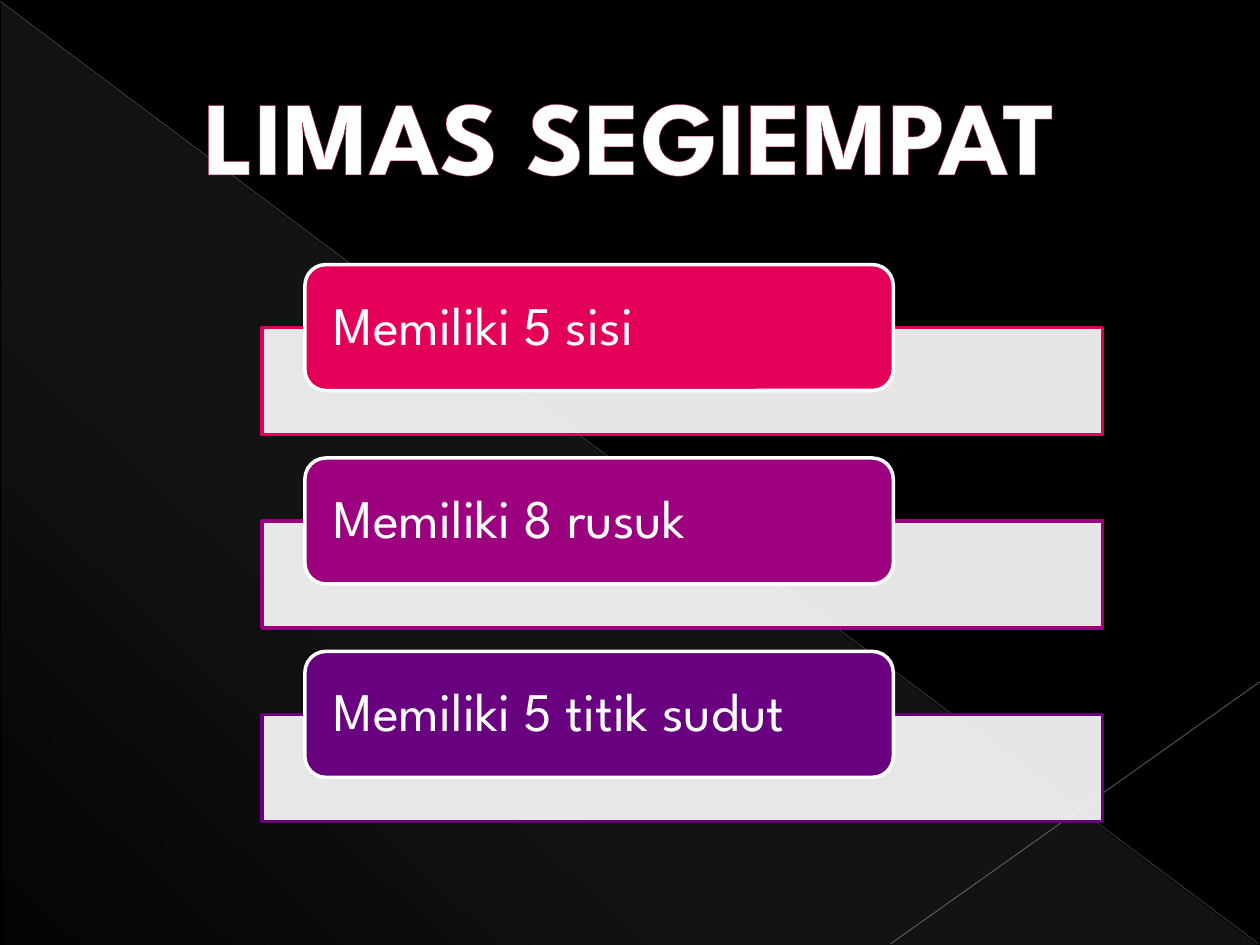
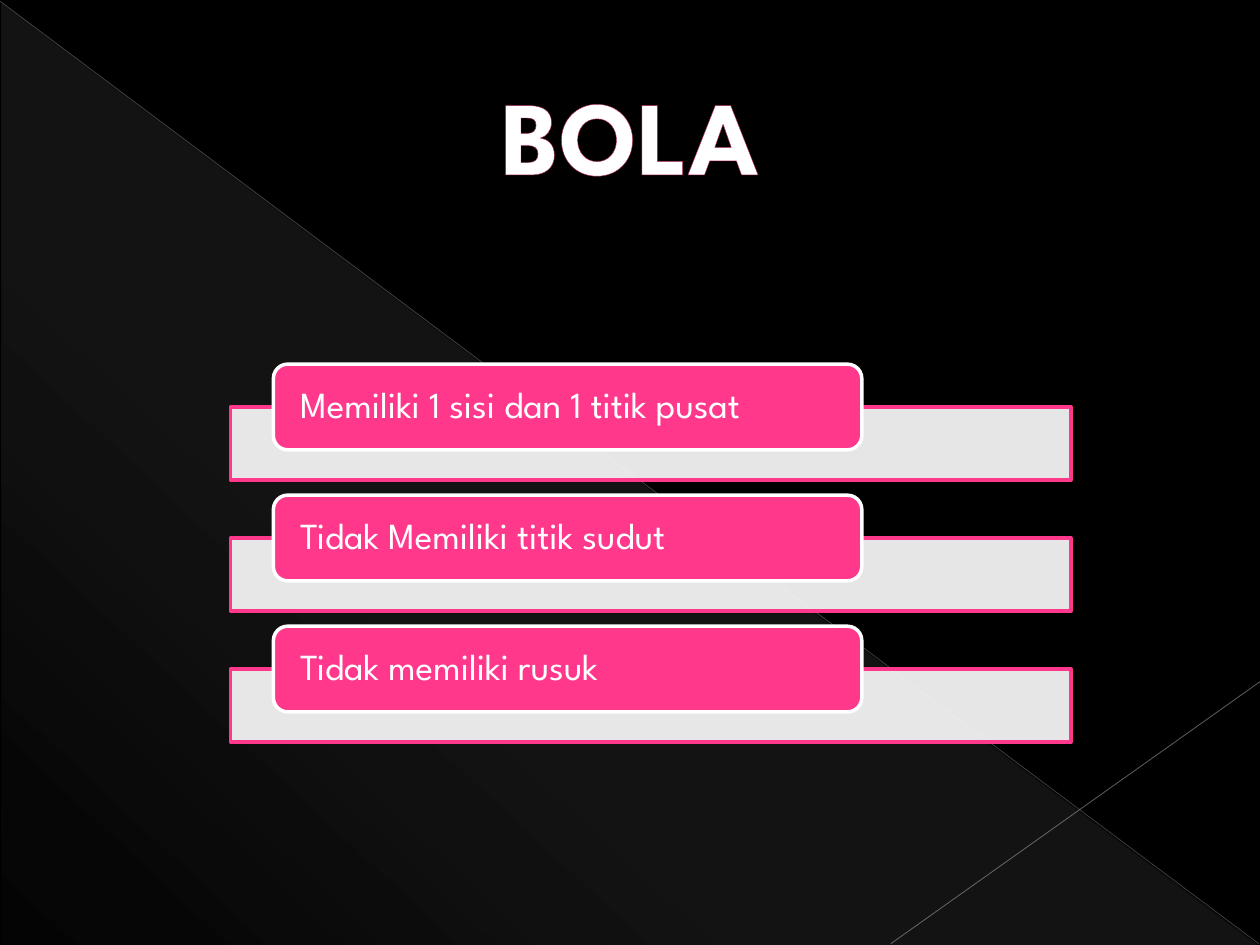
from lxml import etree
from pptx import Presentation, util as u
from pptx.dml.color import RGBColor
from pptx.enum import shapes, text
from pptx.oxml import parse_xml
from pptx.oxml.ns import nsdecls, qn

FONT = "League Spartan"
COLORS = {
    "background": "000000", "white": "FFFFFF", "wedge": "D2D2D2",
    "diagonal": "BFBFBF", "corner": "C6C6C6", "title_edge": "B12761",
    "red": "E40059", "magenta": "9C007F", "purple": "68007F", "pink": "FF388C",
}
WEDGE_STOPS = [(0, 10), (70, 8), (100, 1)]
WEDGE_ANGLE = 133
RULES = [
    ("diagonal", (0, 0.01, 9.99, 7.49), 0.39, 35),
    ("corner", (10, 5.41, 7.07, 7.49), 0.47, 45),
]
BAR_W, LABEL_W, LABEL_INDENT = 6.67, 4.67, 0.34
SLIDES = [
    {"title": "LIMAS SEGIEMPAT", "left": 2.08, "top": 2.1, "pitch": 1.535,
     "bar_drop": 0.5, "bar_h": 0.85, "label_h": 1, "size": 31,
     "facts": [("Memiliki 5 sisi", "red"), ("Memiliki 8 rusuk", "magenta"),
               ("Memiliki 5 titik sudut", "purple")]},
    {"title": "BOLA", "left": 1.83, "top": 2.89, "pitch": 1.04,
     "bar_drop": 0.34, "bar_h": 0.58, "label_h": 0.68, "size": 21,
     "facts": [("Memiliki 1 sisi dan 1 titik pusat", "pink"),
               ("Tidak Memiliki titik sudut", "pink"),
               ("Tidak memiliki rusuk", "pink")]},
]


def rgb(name):
    return RGBColor.from_string(COLORS[name])


def set_alpha(sp, percent):
    color = sp._element.spPr.find(".//" + qn("a:srgbClr"))
    etree.SubElement(color, qn("a:alpha"), val=str(percent * 1000))


def add_box(s, kind, box, fill=None, line=None):
    sp = s.shapes.add_shape(kind, *map(u.Inches, box))
    sp.shadow.inherit = False
    if fill:
        sp.fill.solid()
        sp.fill.fore_color.rgb = rgb(fill)
    if line:
        sp.line.color.rgb = rgb(line)
        sp.line.width = u.Pt(2)
    else:
        sp.line.fill.background()
    return sp


def write(sp, content, size, bold=False, align=text.PP_ALIGN.LEFT,
          inset=(0.1, 0.05), spacing=None, edge=None):
    tf = sp.text_frame
    tf.word_wrap = True
    tf.vertical_anchor = text.MSO_ANCHOR.MIDDLE
    tf.margin_left = tf.margin_right = u.Inches(inset[0])
    tf.margin_top = tf.margin_bottom = u.Inches(inset[1])
    p = tf.paragraphs[0]
    p.alignment = align
    p.line_spacing = spacing
    r = p.add_run()
    r.text = content
    r.font.name = FONT
    r.font.size = u.Pt(size)
    r.font.bold = bold
    r.font.color.rgb = rgb("white")
    if edge:
        r.font._element.insert(0, parse_xml(
            f'<a:ln {nsdecls("a")} w="6350"><a:solidFill>'
            f'<a:srgbClr val="{COLORS[edge]}"/></a:solidFill></a:ln>'))


def add_backdrop(s):
    s.background.fill.solid()
    s.background.fill.fore_color.rgb = rgb("background")
    wedge = add_box(s, shapes.MSO_SHAPE.RIGHT_TRIANGLE, (0.01, 0.02, 9.98, 7.48))
    stops = "".join(
        f'<a:gs pos="{pos * 1000}"><a:srgbClr val="{COLORS["wedge"]}">'
        f'<a:alpha val="{alpha * 1000}"/></a:srgbClr></a:gs>'
        for pos, alpha in WEDGE_STOPS)
    wedge._element.spPr.find(qn("a:prstGeom")).addnext(parse_xml(
        f'<a:gradFill {nsdecls("a")}><a:gsLst>{stops}</a:gsLst>'
        f'<a:lin ang="{WEDGE_ANGLE * 60000}" scaled="0"/></a:gradFill>'))
    for color, ends, width, alpha in RULES:
        rule = s.shapes.add_connector(shapes.MSO_CONNECTOR.STRAIGHT,
                                      *map(u.Inches, ends))
        rule.line.color.rgb = rgb(color)
        rule.line.width = u.Pt(width)
        set_alpha(rule, alpha)
        etree.SubElement(rule._element.spPr, qn("a:effectLst"))


def add_title(s, content):
    sp = s.shapes.add_textbox(*map(u.Inches, (0.5, 0.29, 9, 1.53)))
    write(sp, content, 60, bold=True, align=text.PP_ALIGN.CENTER,
          edge="title_edge")


def add_facts(s, data):
    for i, (fact, color) in enumerate(data["facts"]):
        top = data["top"] + i * data["pitch"]
        bar = add_box(s, shapes.MSO_SHAPE.RECTANGLE,
                      (data["left"], top + data["bar_drop"], BAR_W, data["bar_h"]),
                      fill="white", line=color)
        set_alpha(bar, 90)
        label = add_box(s, shapes.MSO_SHAPE.ROUNDED_RECTANGLE,
                        (data["left"] + LABEL_INDENT, top, LABEL_W, data["label_h"]),
                        fill=color, line="white")
        write(label, fact, data["size"], inset=(0.18, 0), spacing=0.9)


def main():
    prs = Presentation()
    prs.slide_width, prs.slide_height = u.Inches(10), u.Inches(7.5)
    for data in SLIDES:
        s = prs.slides.add_slide(prs.slide_layouts[6])
        add_backdrop(s)
        add_title(s, data["title"])
        add_facts(s, data)
    prs.save("out.pptx")


if __name__ == "__main__":
    main()
